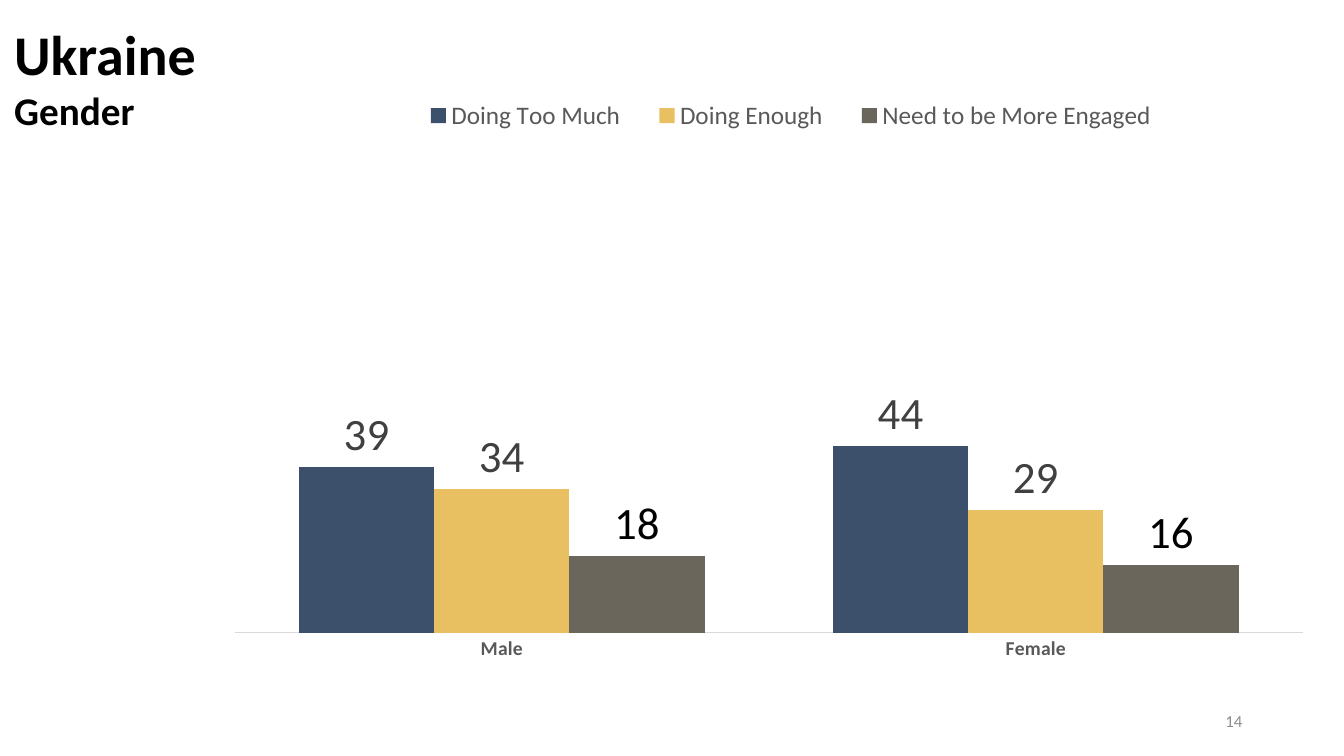
from lxml import etree
from pptx import Presentation
from pptx import util as u
from pptx.chart.data import CategoryChartData
from pptx.dml.color import RGBColor
from pptx.enum import chart as ch, text as tx
from pptx.oxml.ns import qn

SCALE = 9144


def px(n):
    return u.Emu(n * SCALE)


def rgb(code):
    return RGBColor.from_string(code)


class Deck:
    face = "Calibri"
    black = "000000"
    grey = "595959"

    def __init__(self, wide, high):
        self.prs = Presentation()
        self.prs.slide_width, self.prs.slide_height = px(wide), px(high)
        self.slide = self.prs.slides.add_slide(self.prs.slide_layouts[5])

    def font(self, font, size, color, bold=False):
        font.name, font.size, font.bold = self.face, u.Pt(size), bold
        font.color.rgb = rgb(color)

    def fill(self, shape, box, lines, color, align, anchor, bold=False):
        shape.left, shape.top, shape.width, shape.height = map(px, box)
        frame = shape.text_frame
        frame.word_wrap = True
        frame.auto_size = tx.MSO_AUTO_SIZE.NONE
        frame.vertical_anchor = anchor
        frame.text = "\n".join(line for line, size in lines)
        for para, (line, size) in zip(frame.paragraphs, lines):
            para.alignment = align
            self.font(para.font, size, color, bold)

    def title(self, box, lines):
        self.fill(self.slide.shapes.title, box, lines, self.black,
                  tx.PP_ALIGN.LEFT, tx.MSO_ANCHOR.TOP, True)

    def number(self, box, label):
        shape = self.slide.shapes.add_textbox(*map(px, box))
        self.fill(shape, box, [(label, 12)], "8C8C8C",
                  tx.PP_ALIGN.RIGHT, tx.MSO_ANCHOR.MIDDLE)

    def place(self, parent, spot, inner=False):
        for old in parent.findall(qn("c:layout")):
            parent.remove(old)
        layout = etree.Element(qn("c:layout"))
        manual = etree.SubElement(layout, qn("c:manualLayout"))
        rules = [("layoutTarget", "inner")] if inner else []
        rules += [("xMode", "edge"), ("yMode", "edge")]
        rules += zip("xywh", map(str, spot))
        for tag, val in rules:
            etree.SubElement(manual, qn("c:" + tag)).set("val", val)
        parent.insert(0 if inner else 1, layout)

    def columns(self, box, cats, rows, plot, key):
        data = CategoryChartData()
        data.categories = cats
        for name, vals, color, ink in rows:
            data.add_series(name, vals)
        chart = self.slide.shapes.add_chart(
            ch.XL_CHART_TYPE.COLUMN_CLUSTERED, *map(px, box), data).chart
        self.font(chart.font, 10, self.black)
        chart.has_title = False

        bars = chart.plots[0]
        bars.gap_width, bars.overlap = 95, 0
        bars.vary_by_categories = False
        for bar, (name, vals, color, ink) in zip(bars.series, rows):
            bar.format.fill.solid()
            bar.format.fill.fore_color.rgb = rgb(color)
            labels = bar.data_labels
            labels.show_value = True
            labels.position = ch.XL_LABEL_POSITION.OUTSIDE_END
            self.font(labels.font, 32, ink)

        base = chart.category_axis
        base.major_tick_mark = ch.XL_TICK_MARK.NONE
        base.format.line.color.rgb = rgb("D9D9D9")
        base.format.line.width = u.Pt(0.75)
        self.font(base.tick_labels.font, 14, self.grey, True)

        scale = chart.value_axis
        scale.minimum_scale, scale.maximum_scale = 0, 100
        scale.has_major_gridlines = False
        scale.visible = False

        chart.has_legend = True
        legend = chart.legend
        legend.position = ch.XL_LEGEND_POSITION.TOP
        legend.include_in_layout = False
        self.font(legend.font, 18, self.grey)
        self.place(legend._element, key)
        self.place(chart._chartSpace.chart.plotArea, plot, True)


def main():
    deck = Deck(1333, 750)
    deck.columns(
        (222, 53, 1092, 618), ["Male", "Female"],
        [("Doing Too Much", (39, 44), "3C4F6B", "404040"),
         ("Doing Enough", (34, 29), "E8C062", "404040"),
         ("Need to be More Engaged", (18, 16), "6B665B", "000000")],
        plot=(0.01, 0.25, 0.97, 0.68), key=(0.16, 0.06, 0.71, 0.08))
    deck.title((4, 14, 826, 192), [("Ukraine", 40), ("Gender", 28)])
    deck.number((942, 695, 300, 40), "14")
    deck.prs.save("out.pptx")


if __name__ == "__main__":
    main()
